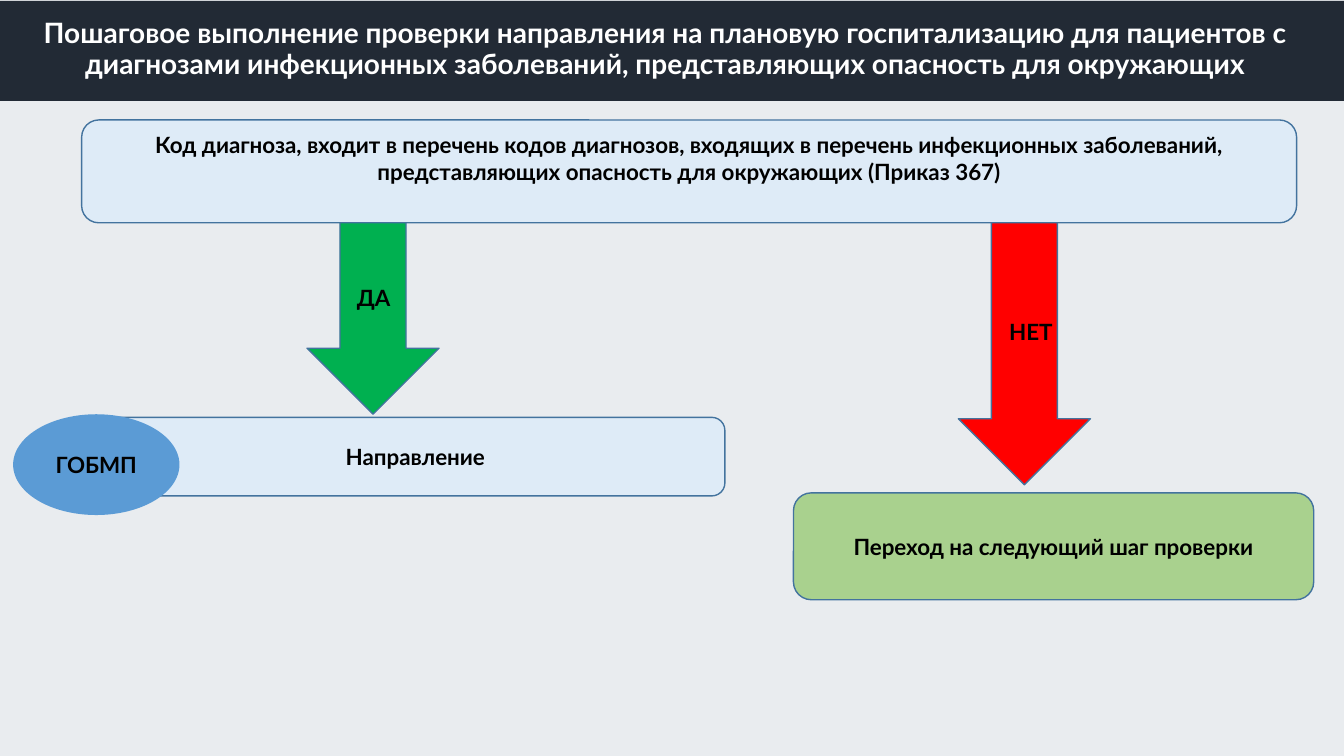
"""Builds the slide on checking referrals for patients with dangerous infections."""
from dataclasses import dataclass
from typing import Optional

from lxml.etree import SubElement
from pptx import Presentation
from pptx.dml.color import RGBColor
from pptx.enum.shapes import MSO_SHAPE as Shape
from pptx.enum.text import MSO_ANCHOR as Anchor, PP_ALIGN as Align
from pptx.oxml.ns import qn
from pptx.util import Inches, Pt

COLORS = {
    "backdrop": "2C4A64",
    "header": "222A35",
    "step": "DEEBF7",
    "next_step": "A9D18E",
    "yes": "00B050",
    "no": "FF0000",
    "badge": "5B9BD5",
    "outline": "43739E",
    "white": "FFFFFF",
    "black": "000000",
}
ARROW_TOP, ARROW_WIDTH = 2.21, 1.31


@dataclass(frozen=True)
class Block:
    kind: Shape
    left: float
    top: float
    width: float
    height: float
    fill: str
    text: str = ""
    outlined: bool = True
    opacity: int = 100
    bottom_inset: float = 0.05


@dataclass(frozen=True)
class Label:
    left: float
    top: float
    width: float
    height: float
    text: str
    size: int = 16
    color: str = "black"
    align: Align = Align.CENTER
    anchor: Anchor = Anchor.TOP
    line_spacing: Optional[float] = None


def arrow(center: float, length: float, fill: str) -> Block:
    return Block(Shape.DOWN_ARROW, center - ARROW_WIDTH / 2, ARROW_TOP,
                 ARROW_WIDTH, length, fill)


BLOCKS = [
    Block(Shape.RECTANGLE, 0, 0, 13.33, 7.5, "backdrop", outlined=False, opacity=10),
    Block(Shape.RECTANGLE, 0, 0.01, 13.33, 0.99, "header", outlined=False),
    Block(Shape.ROUNDED_RECTANGLE, 0.81, 1.19, 12.05, 1.02, "step",
          "Код диагноза, входит в перечень кодов диагнозов, входящих в перечень "
          "инфекционных заболеваний, представляющих опасность для окружающих "
          "(Приказ 367)", bottom_inset=0.32),
    arrow(3.7, 1.9, "yes"),
    Block(Shape.ROUNDED_RECTANGLE, 1.05, 4.14, 6.14, 0.78, "step", "Направление"),
    arrow(10.16, 2.6, "no"),
    Block(Shape.ROUNDED_RECTANGLE, 7.87, 4.89, 5.16, 1.06, "next_step",
          "Переход на следующий шаг проверки"),
    Block(Shape.OVAL, 0.13, 4.11, 1.65, 1, "badge", "ГОБМП", outlined=False),
]
LABELS = [
    Label(0, 0.18, 13.2, 0.63,
          "Пошаговое выполнение проверки направления на плановую госпитализацию "
          "для пациентов с диагнозами инфекционных заболеваний, представляющих "
          "опасность для окружающих",
          size=20, color="white", anchor=Anchor.MIDDLE, line_spacing=0.9),
    Label(3.44, 2.77, 0.68, 0.37, "ДА", align=Align.LEFT),
    Label(9.74, 3.11, 0.97, 0.37, "НЕТ"),
]


def rgb(name: str) -> RGBColor:
    return RGBColor.from_string(COLORS[name])


def write_text(frame, text: str, *, size: int = 16, color: str = "black",
               align: Align = Align.CENTER, anchor: Anchor = Anchor.MIDDLE,
               line_spacing: Optional[float] = None) -> None:
    frame.word_wrap = True
    frame.vertical_anchor = anchor
    para = frame.paragraphs[0]
    para.alignment = align
    para.line_spacing = line_spacing
    span = para.add_run()
    span.text = text
    span.font.name = "Lato"
    span.font.size = Pt(size)
    span.font.bold = True
    span.font.color.rgb = rgb(color)


def draw_block(page, block: Block) -> None:
    box = page.shapes.add_shape(block.kind, Inches(block.left), Inches(block.top),
                                Inches(block.width), Inches(block.height))
    box.shadow.inherit = False
    box.fill.solid()
    box.fill.fore_color.rgb = rgb(block.fill)
    if block.opacity < 100:
        tint = box.fill._xPr.find(qn("a:solidFill"))[0]
        SubElement(tint, qn("a:alpha"), val=str(block.opacity * 1000))
    if block.outlined:
        box.line.color.rgb = rgb("outline")
        box.line.width = Pt(1)
    else:
        box.line.fill.background()
    if block.text:
        box.text_frame.margin_bottom = Inches(block.bottom_inset)
        write_text(box.text_frame, block.text)


def draw_label(page, label: Label) -> None:
    box = page.shapes.add_textbox(Inches(label.left), Inches(label.top),
                                  Inches(label.width), Inches(label.height))
    write_text(box.text_frame, label.text, size=label.size, color=label.color,
               align=label.align, anchor=label.anchor,
               line_spacing=label.line_spacing)


def main() -> None:
    deck = Presentation()
    deck.slide_width, deck.slide_height = Inches(13.33), Inches(7.5)
    page = deck.slides.add_slide(deck.slide_layouts[6])
    for block in BLOCKS:
        draw_block(page, block)
    for label in LABELS:
        draw_label(page, label)
    deck.save("out.pptx")


if __name__ == "__main__":
    main()
